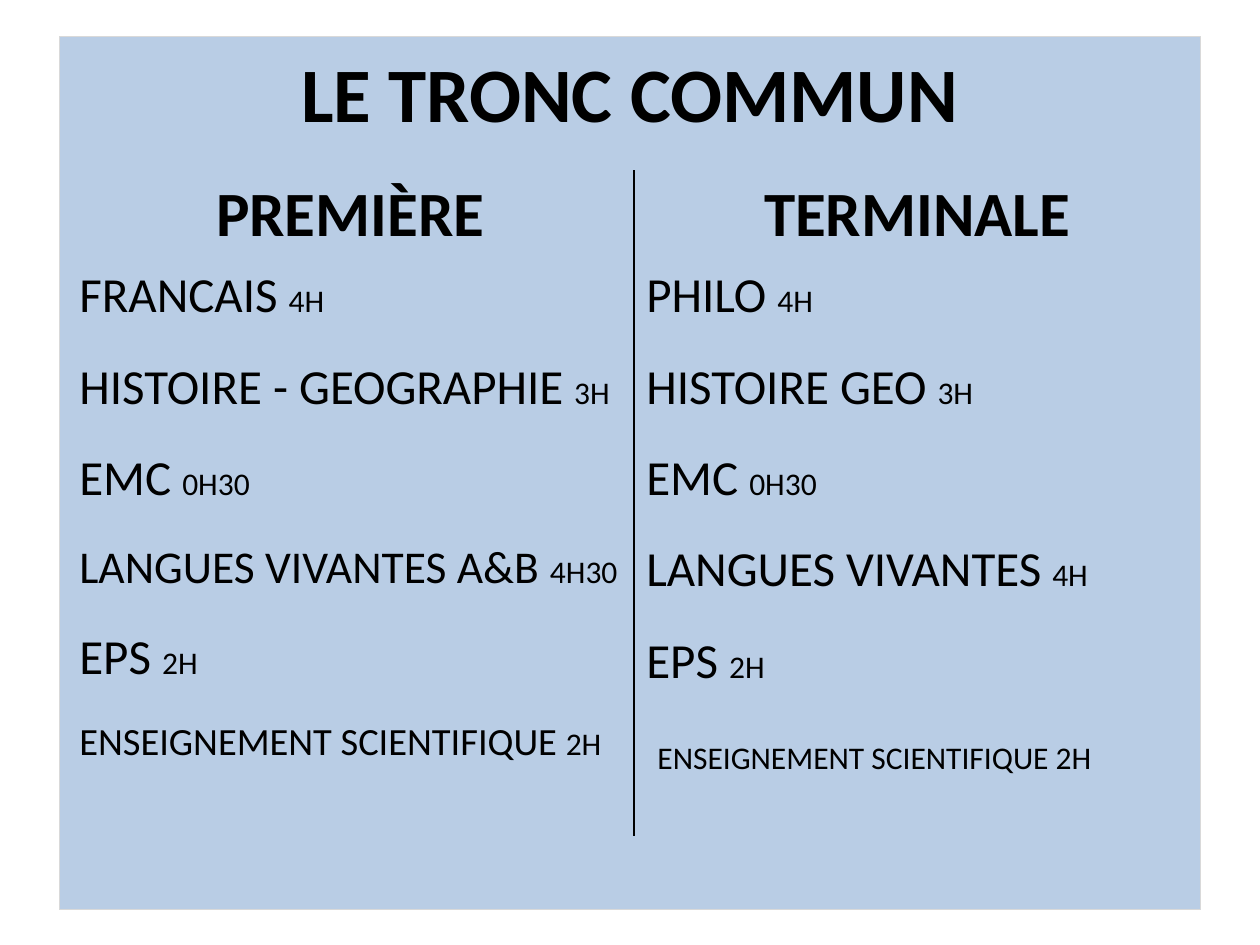
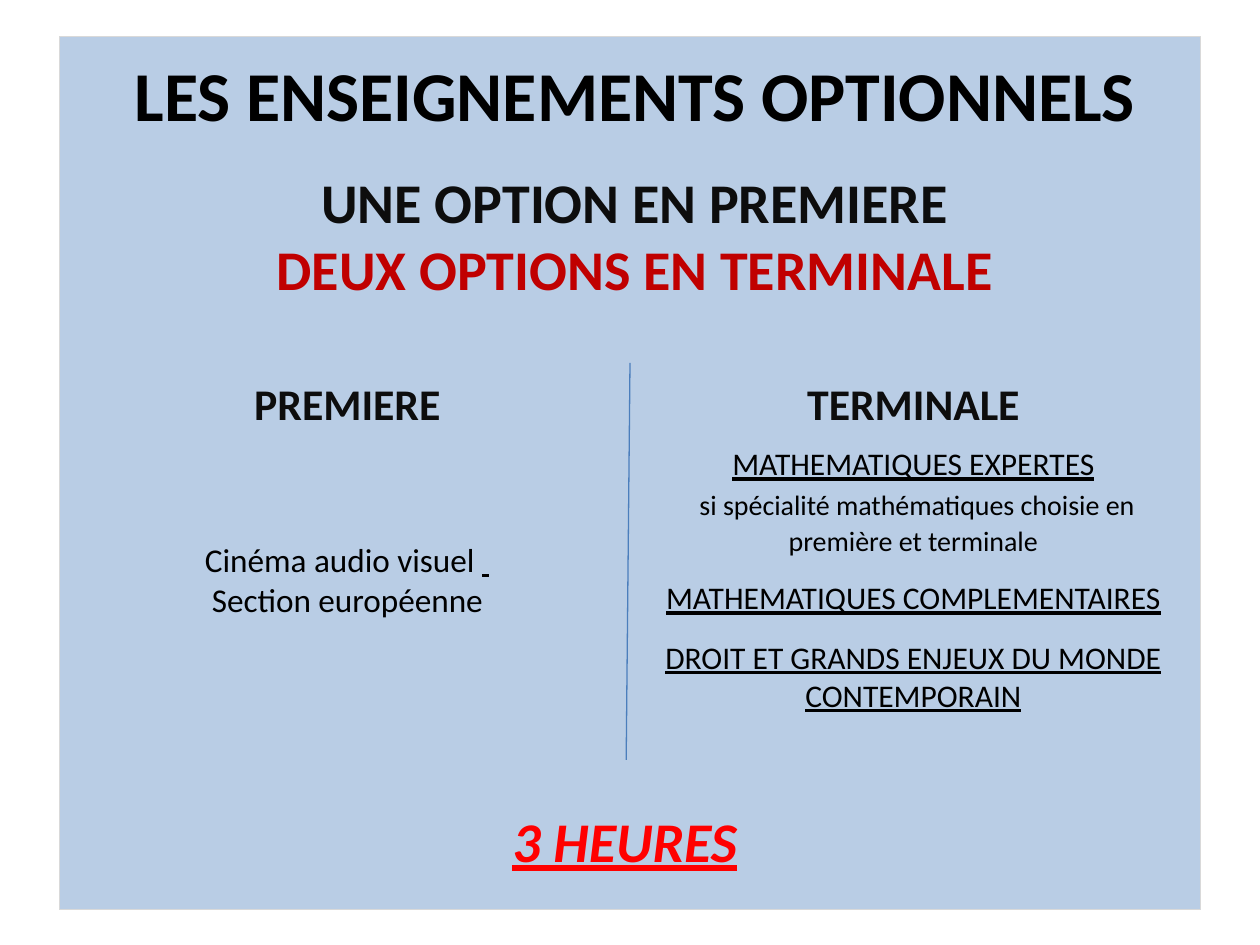
"""Build two slides on the common core and the optional courses."""
from lxml import etree
from pptx import Presentation
from pptx.dml.color import RGBColor
from pptx.enum.shapes import MSO_CONNECTOR, MSO_SHAPE
from pptx.enum.text import MSO_ANCHOR, MSO_AUTO_SIZE, PP_ALIGN
from pptx.oxml.ns import qn
from pptx.util import Pt

CENTER, LEFT = PP_ALIGN.CENTER, PP_ALIGN.LEFT
TOP, MIDDLE = MSO_ANCHOR.TOP, MSO_ANCHOR.MIDDLE
NO_AUTOFIT = MSO_AUTO_SIZE.NONE
RECTANGLE, STRAIGHT = MSO_SHAPE.RECTANGLE, MSO_CONNECTOR.STRAIGHT
TITLE_ONLY = 5
PLAIN_TABLE = "{2D5ABB26-0587-4C30-8999-92F81FD0307C}"
COLORS = {
    "panel": "B9CDE5", "edge": "D9D9D9", "text": "000000", "heading": "0D0D0D",
    "divider": "4B7EBC", "terminale": "C00000", "hours": "FF0000",
}


def color(name):
    """Return the named colour."""
    return RGBColor.from_string(COLORS[name])


def run(text, size, ink="text", **style):
    """Describe a run of text."""
    return text, ink, {"name": "Calibri", "size": Pt(size), "bold": False, **style}


def para(*runs, align=CENTER, before=0, after=0):
    """Describe a paragraph."""
    return runs, {"alignment": align, "space_before": Pt(before), "space_after": Pt(after)}


def lesson(name, hours, size=28):
    """Describe a course with its weekly hours."""
    return para(run(name, size), run(hours, 18), align=LEFT, before=6, after=12)


class Deck:
    """Hold the style and the current slide."""

    def __init__(self):
        """Start a 10 by 7.5 inch deck."""
        self.prs = Presentation()
        self.prs.slide_width, self.prs.slide_height = Pt(720), Pt(540)
        self.slide = None

    def new_slide(self):
        """Add a slide with the background panel behind its title."""
        self.slide = self.prs.slides.add_slide(self.prs.slide_layouts[TITLE_ONLY])
        shapes = self.slide.shapes
        panel = shapes.add_shape(RECTANGLE, Pt(33.84), Pt(20.88), Pt(652.32), Pt(498.96))
        panel.shadow.inherit = False
        panel.fill.solid()
        panel.fill.fore_color.rgb = color("panel")
        panel.line.color.rgb = color("edge")
        panel.line.width = Pt(0.75)
        shapes._spTree.insert(2, panel._element)

    def fill_text(self, frame, paragraphs):
        """Fill a text frame with described paragraphs."""
        for index, (runs, layout) in enumerate(paragraphs):
            paragraph = frame.add_paragraph() if index else frame.paragraphs[0]
            for key, value in layout.items():
                setattr(paragraph, key, value)
            for text, ink, style in runs:
                piece = paragraph.add_run()
                piece.text = text
                piece.font.color.rgb = color(ink)
                for key, value in style.items():
                    setattr(piece.font, key, value)

    def title(self, box, *paragraphs):
        """Place and fill the title placeholder."""
        title = self.slide.shapes.title
        for key, value in zip(("left", "top", "width", "height"), box):
            setattr(title, key, Pt(value))
        frame = title.text_frame
        frame.auto_size, frame.vertical_anchor = NO_AUTOFIT, TOP
        self.fill_text(frame, paragraphs)

    def text(self, box, *paragraphs):
        """Add an unwrapped text box."""
        frame = self.slide.shapes.add_textbox(*map(Pt, box)).text_frame
        frame.word_wrap = False
        self.fill_text(frame, paragraphs)

    def line(self, start, end, ink):
        """Add a thin straight line."""
        line = self.slide.shapes.add_connector(STRAIGHT, *map(Pt, start + end))
        line.line.color.rgb = color(ink)
        line.line.width = Pt(0.75)
        etree.SubElement(line._element.spPr, qn("a:effectLst"))

    def table(self, left, top, column_width, heights, rows):
        """Add a plain two-column table and return it."""
        table = self.slide.shapes.add_table(
            len(rows), 2, Pt(left), Pt(top), Pt(2 * column_width), Pt(sum(heights))).table
        table.first_row = table.horz_banding = False
        table._tbl.tblPr.find(qn("a:tableStyleId")).text = PLAIN_TABLE
        for column in table.columns:
            column.width = Pt(column_width)
        for row, height, contents in zip(table.rows, heights, rows):
            row.height = Pt(height)
            for cell, paragraphs in zip(row.cells, contents):
                cell.fill.background()
                self.fill_text(cell.text_frame, paragraphs)
        return table

    def middle_border(self, table, width):
        """Draw the border between the two columns."""
        for row in table.rows:
            for cell, side in zip(row.cells, ("a:lnR", "a:lnL")):
                edge = etree.Element(qn(side), w=str(Pt(width)))
                fill = etree.SubElement(edge, qn("a:solidFill"))
                etree.SubElement(fill, qn("a:srgbClr"), val=COLORS["text"])
                cell._tc.get_or_add_tcPr().insert(0, edge)


def common_core(deck):
    """Build the common core slide."""
    deck.new_slide()
    deck.title((36.72, 22.32, 646.56, 60.48), para(run("LE TRONC COMMUN", 44, bold=True)))
    headings = [[para(run(level, 36, bold=True))] for level in ("PREMIÈRE", "TERMINALE")]
    premiere = [
        lesson("FRANCAIS ", "4H"),
        lesson("HISTOIRE - GEOGRAPHIE ", "3H"),
        lesson("EMC ", "0H30"),
        lesson("LANGUES VIVANTES A&B ", "4H30", 26),
        lesson("EPS ", "2H"),
        lesson("ENSEIGNEMENT SCIENTIFIQUE ", "2H", 22),
    ]
    terminale = [
        lesson("PHILO ", "4H"),
        lesson("HISTOIRE GEO ", "3H"),
        lesson("EMC ", "0H30"),
        lesson("LANGUES VIVANTES ", "4H"),
        lesson("EPS ", "2H"),
        lesson(" ", "ENSEIGNEMENT SCIENTIFIQUE 2H"),
    ]
    courses = deck.table(38.16, 97.2, 324, (51, 329), [headings, [premiere, terminale]])
    deck.middle_border(courses, 1.5)


def optional_courses(deck):
    """Build the optional courses slide."""
    deck.new_slide()
    deck.line((360, 207.36), (357.84, 434.16), "divider")
    deck.title(
        (42.48, 25.92, 640.8, 151.2),
        para(run("LES ENSEIGNEMENTS OPTIONNELS", 40, bold=True), before=6, after=12),
        para(run("UNE OPTION EN PREMIERE", 32, "heading", bold=True), before=6),
        para(run("DEUX OPTIONS EN TERMINALE", 32, "terminale", bold=True), after=12),
    )
    headings = [[para(run(level, 25, "heading", bold=True))] for level in ("PREMIERE", "TERMINALE")]
    premiere = [
        para(run("Cinéma audio visuel ", 19), run(" ", 19, underline=True)),
        para(run("Section européenne", 19)),
    ]
    terminale = [
        para(run("MATHEMATIQUES EXPERTES", 18, underline=True)),
        para(run(" ", 19),
             run("si spécialité mathématiques choisie en première et terminale", 16)),
        para(run("MATHEMATIQUES COMPLEMENTAIRES", 18, underline=True), before=12),
        para(run("DROIT ET GRANDS ENJEUX DU MONDE CONTEMPORAIN", 18, underline=True), before=12),
    ]
    options = deck.table(36.72, 213.12, 323.5, (38, 159), [headings, [premiere, terminale]])
    options.cell(1, 0).vertical_anchor = MIDDLE
    deck.text((285.12, 457.2, 144, 46.08),
              para(run("3 HEURES", 32, "hours", bold=True, italic=True, underline=True)))


def main():
    """Build and save the deck."""
    deck = Deck()
    common_core(deck)
    optional_courses(deck)
    deck.prs.save("out.pptx")


if __name__ == "__main__":
    main()
